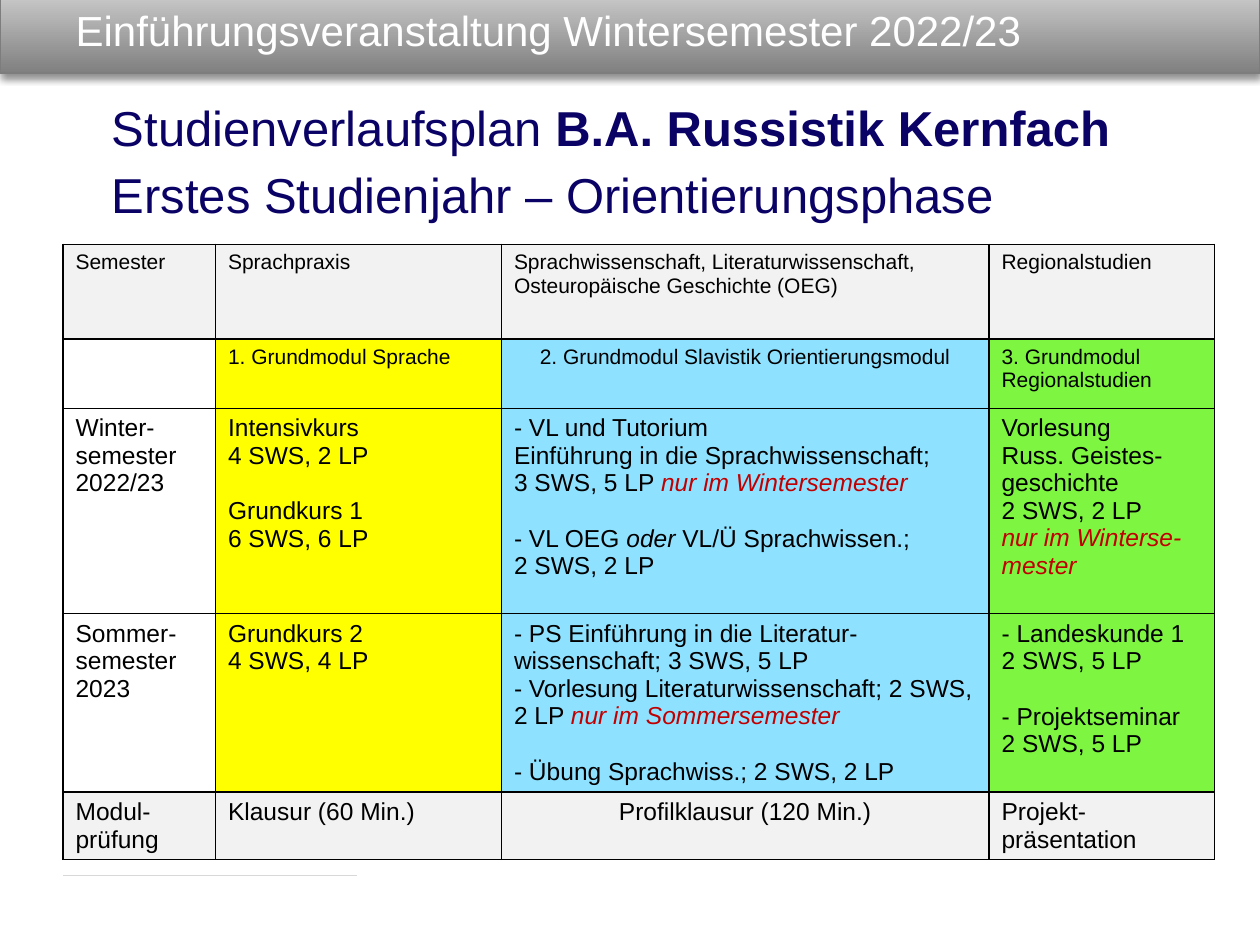
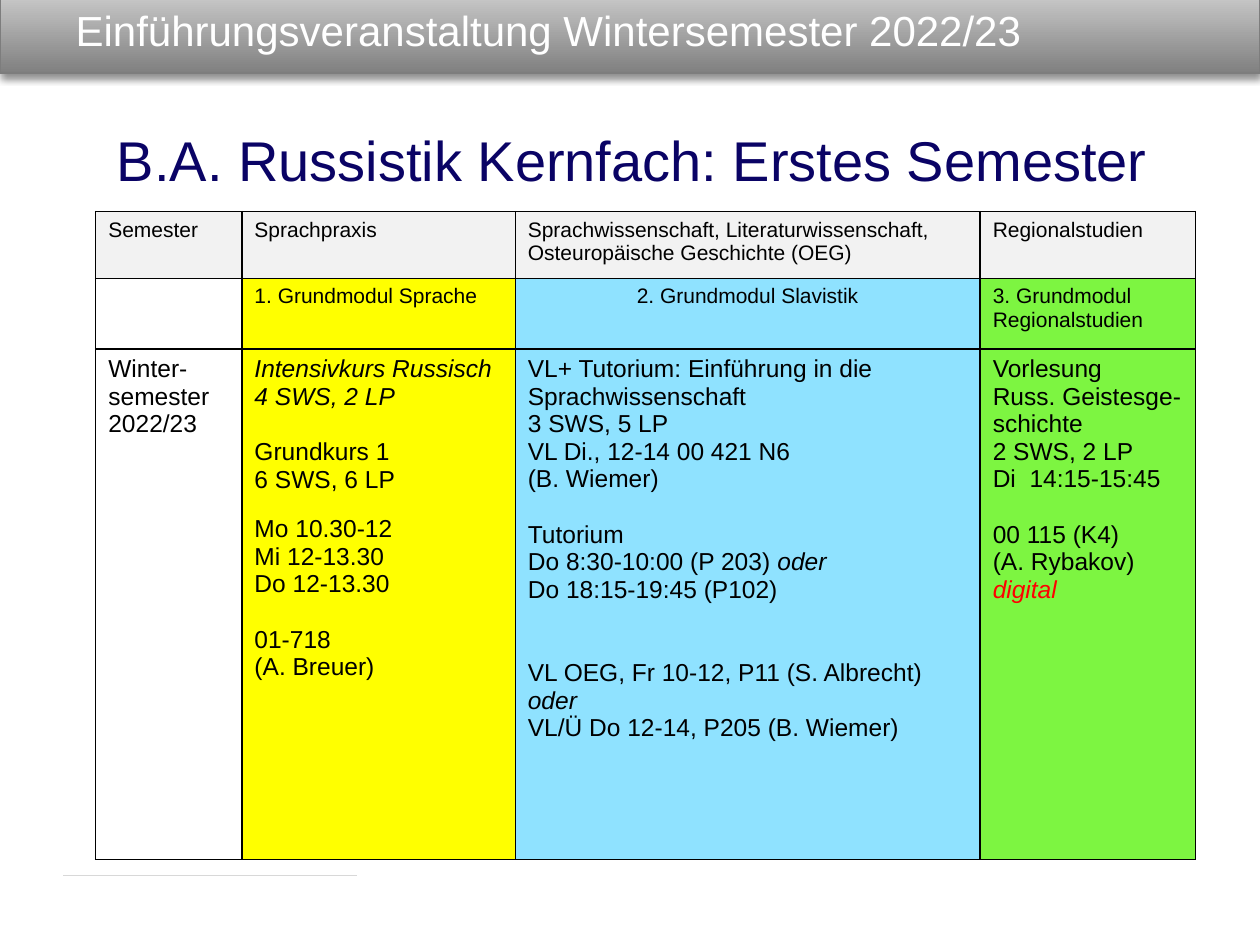
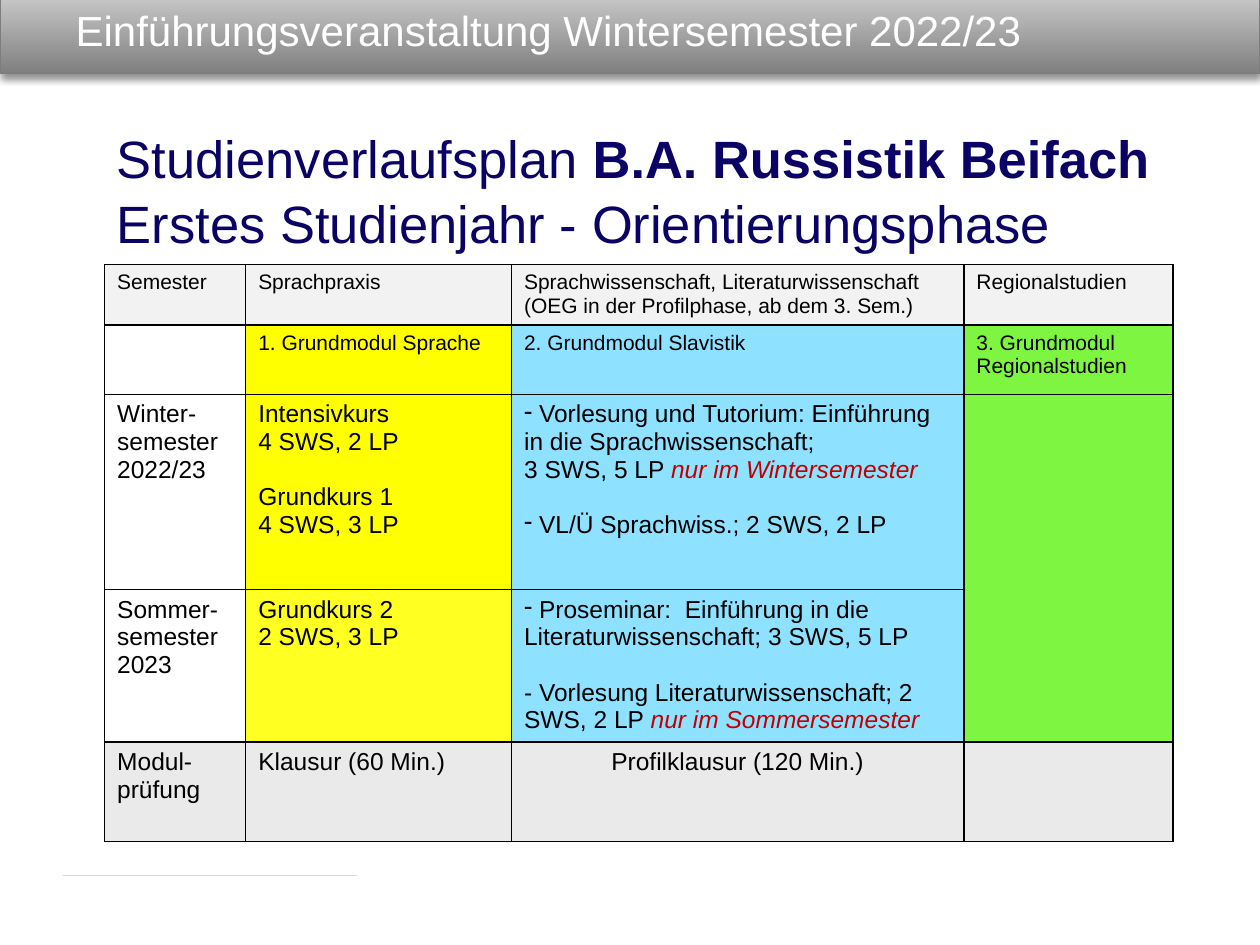
from dataclasses import dataclass

from lxml.etree import SubElement
from pptx import Presentation
from pptx.dml.color import RGBColor
from pptx.enum.shapes import MSO_CONNECTOR, MSO_SHAPE
from pptx.enum.text import MSO_ANCHOR, MSO_AUTO_SIZE, PP_ALIGN
from pptx.oxml.ns import qn
from pptx.util import Inches, Pt

FONT = "Arial"
BLACK = RGBColor(0x00, 0x00, 0x00)
WHITE = RGBColor(0xFF, 0xFF, 0xFF)
NAVY = RGBColor(0x0A, 0x03, 0x65)
CRIMSON = RGBColor(0xC0, 0x00, 0x00)
RED = RGBColor(0xFF, 0x00, 0x00)
YELLOW = RGBColor(0xFF, 0xFF, 0x00)
LEMON = RGBColor(0xFF, 0xFF, 0x21)
BLUE = RGBColor(0x8F, 0xE2, 0xFF)
GREEN = RGBColor(0x7D, 0xF5, 0x41)
PALE = RGBColor(0xF2, 0xF2, 0xF2)
SILVER = RGBColor(0xEA, 0xEA, 0xEA)
RULE = RGBColor(0xD8, 0xD8, 0xD8)
EDGE = RGBColor(0x7D, 0x7D, 0x7D)
DARK = RGBColor(0x80, 0x80, 0x80)
LIGHT = RGBColor(0xCD, 0xCD, 0xCD)

TITLE = "Einführungsveranstaltung Wintersemester 2022/23"
HEADS = ["Semester", "Sprachpraxis",
         "Sprachwissenschaft, Literaturwissenschaft, Osteuropäische Geschichte (OEG)",
         "Regionalstudien"]
LANG = "1. Grundmodul Sprache"
REGION = "3. Grundmodul Regionalstudien"
WINTER = "Winter-semester 2022/23"
SUMMER = "Sommer-semester 2023"
MODULES = [None, YELLOW, BLUE, GREEN]
LINE = 16  # height of one text line in the tables, in points


@dataclass
class Run:
    text: str
    color: RGBColor = None
    bold: bool = None
    italic: bool = None


@dataclass
class Par:
    runs: list
    gap: float = 0
    mid: bool = False
    dash: bool = False
    italic: bool = None


@dataclass
class Row:
    height: float
    size: int
    fills: list
    cells: list


def par(*runs, **style):
    return Par([Run(r) if isinstance(r, str) else r for r in runs], **style)


def slant(text, color=None):
    return Run(text, color, italic=True)


def add_dash(para):
    props = para._p.get_or_add_pPr()
    props.set("marL", "0")
    props.set("indent", "0")
    SubElement(props, qn("a:buChar")).set("char", "-")


def write(frame, pars, size, color):
    """Fill a text frame; each item is a Par or a plain string."""
    if not isinstance(pars, list):
        pars = [pars]
    for i, item in enumerate(pars):
        if isinstance(item, str):
            item = par(item)
        para = frame.paragraphs[0] if i == 0 else frame.add_paragraph()
        para.alignment = PP_ALIGN.CENTER if item.mid else PP_ALIGN.LEFT
        if item.gap:
            para.space_before = Pt(item.gap)
        if item.dash:
            add_dash(para)
        font = para.font
        font.name, font.size, font.italic = FONT, Pt(size), item.italic
        font.color.rgb = color
        for part in item.runs:
            run = para.add_run()
            run.text = part.text
            if part.bold:
                run.font.bold = True
            if part.italic:
                run.font.italic = True
            if part.color is not None:
                run.font.color.rgb = part.color


def add_shadow(shape):
    shape.shadow.inherit = False
    effects = shape._element.spPr.find(qn("a:effectLst"))
    outer = SubElement(effects, qn("a:outerShdw"), blurRad=str(Pt(4)),
                       dist=str(Pt(3)), dir="5400000", rotWithShape="0")
    tint = SubElement(outer, qn("a:srgbClr"), val="000000")
    SubElement(tint, qn("a:alpha"), val="43000")


def add_band(slide):
    band = slide.shapes.add_shape(MSO_SHAPE.RECTANGLE, Inches(0), Inches(-0.08),
                                  Inches(10), Inches(0.66))
    band.fill.gradient()
    band.fill.gradient_angle = 90
    for stop, color in zip(band.fill.gradient_stops, (DARK, LIGHT)):
        stop.color.rgb = color
    band.line.color.rgb = EDGE
    band.line.width = Pt(0.75)
    add_shadow(band)
    slide.shapes.title._element.addprevious(band._element)


def add_rule(slide):
    rule = slide.shapes.add_connector(MSO_CONNECTOR.STRAIGHT, Inches(0.5), Inches(6.95),
                                      Inches(2.83), Inches(6.95))
    rule.line.color.rgb = RULE
    rule.line.width = Pt(0.75)
    SubElement(rule._element.spPr, qn("a:effectLst"))


def add_slide(deck):
    """Add a slide with the shared band, title and footer rule."""
    slide = deck.slides.add_slide(deck.slide_layouts[5])
    title = slide.shapes.title
    title.left, title.top = Inches(0.5), Inches(0)
    title.width, title.height = Inches(9.27), Inches(0.47)
    frame = title.text_frame
    frame.auto_size = MSO_AUTO_SIZE.NONE
    frame.vertical_anchor = MSO_ANCHOR.MIDDLE
    write(frame, TITLE, 24, WHITE)
    add_band(slide)
    add_rule(slide)
    return slide


def add_heading(slide, left, top, height, size, pars):
    box = slide.shapes.add_textbox(Inches(left), Inches(top), Inches(8.43), Inches(height))
    frame = box.text_frame
    frame.word_wrap = True
    frame.margin_top = Inches(0.09)
    write(frame, pars, size, NAVY)


def add_border(cell):
    props = cell._tc.get_or_add_tcPr()
    for side in "LRTB":
        line = SubElement(props, qn(f"a:ln{side}"), w=str(Pt(1)))
        fill = SubElement(line, qn("a:solidFill"))
        SubElement(fill, qn("a:srgbClr"), val=str(BLACK))


def add_plan(slide, left, top, widths, rows):
    """Add the study plan table; cells take the fill and text size of their row."""
    height = sum(row.height for row in rows)
    table = slide.shapes.add_table(len(rows), len(widths), Inches(left), Inches(top),
                                   Inches(sum(widths)), Inches(height)).table
    table.first_row = table.horz_banding = False
    for col, width in zip(table.columns, widths):
        col.width = Inches(width)
    for i, row in enumerate(rows):
        table.rows[i].height = Inches(row.height)
        for j, (fill, text) in enumerate(zip(row.fills, row.cells)):
            cell = table.cell(i, j)
            add_border(cell)
            if fill is None:
                cell.fill.background()
            else:
                cell.fill.solid()
                cell.fill.fore_color.rgb = fill
            if text:
                write(cell.text_frame, text, 12 if row.size == 12 else 14, BLACK)
    return table


def head_row(height, cells=HEADS):
    return Row(height, 12, [PALE] * 4, cells)


def module_row(height, middle):
    return Row(height, 12, MODULES, ["", LANG, middle, REGION])


def term_row(height, cells, fills=MODULES):
    return Row(height, 14, fills, cells)


def exam_row(height, fill, last):
    cells = ["Modul-prüfung", "Klausur (60 Min.)",
             par("Profilklausur (120 Min.)", mid=True), last]
    return Row(height, 14, [fill] * 4, cells)


def major_year(deck):
    slide = add_slide(deck)
    add_plan(slide, 0.5, 1.94, [1.21, 2.27, 3.87, 1.79], [
        head_row(0.75),
        module_row(0.55, par("2. Grundmodul Slavistik Orientierungsmodul", mid=True)),
        term_row(1.63, [
            WINTER,
            ["Intensivkurs", "4 SWS, 2 LP", par("Grundkurs 1", gap=LINE), "6 SWS, 6 LP"],
            ["- VL und Tutorium", "Einführung in die Sprachwissenschaft;",
             par("3 SWS, 5 LP ", slant("nur im Wintersemester", CRIMSON)),
             par("- VL OEG ", slant("oder"), " VL/Ü Sprachwissen.;", gap=LINE),
             "2 SWS, 2 LP"],
            ["Vorlesung", "Russ. Geistes-geschichte", "2 SWS, 2 LP",
             par(slant("nur im Winterse-mester", CRIMSON))],
        ]),
        term_row(1.41, [
            SUMMER,
            ["Grundkurs 2", "4 SWS, 4 LP"],
            ["- PS Einführung in die Literatur-wissenschaft; 3 SWS, 5 LP",
             par("- Vorlesung Literaturwissenschaft; 2 SWS, 2 LP ",
                 slant("nur im Sommersemester", CRIMSON)),
             par("- Übung Sprachwiss.; 2 SWS, 2 LP", gap=LINE)],
            ["- Landeskunde 1", "2 SWS, 5 LP",
             par("- Projektseminar", gap=LINE), "2 SWS, 5 LP"],
        ]),
        exam_row(0.53, PALE, "Projekt-präsentation"),
    ])
    add_heading(slide, 0.79, 0.68, 1.11, 28, [
        par("Studienverlaufsplan ", Run("B.A. Russistik Kernfach", bold=True)),
        par("Erstes Studienjahr – Orientierungsphase", gap=5)])


def major_term(deck):
    slide = add_slide(deck)
    add_plan(slide, 0.76, 1.68, [1.16, 2.17, 3.69, 1.71], [
        head_row(0.53),
        module_row(0.56, par("2. Grundmodul Slavistik", mid=True)),
        term_row(4.05, [
            WINTER,
            [par("Intensivkurs Russisch", italic=True), par("4 SWS, 2 LP", italic=True),
             par("Grundkurs 1", gap=LINE), "6 SWS, 6 LP",
             par("Mo 10.30-12", gap=12.5), "Mi 12-13.30", "Do 12-13.30",
             par("01-718", gap=LINE), "(A. Breuer)"],
            ["VL+ Tutorium: Einführung in die Sprachwissenschaft", "3 SWS, 5 LP",
             "VL Di., 12-14 00 421 N6", "(B. Wiemer)",
             par("Tutorium", gap=LINE),
             par("Do 8:30-10:00 (P 203) ", slant("oder")), "Do 18:15-19:45 (P102)",
             par("VL OEG, Fr 10-12, P11 (S. Albrecht) ", slant("oder"), gap=2 * LINE),
             "VL/Ü Do 12-14, P205 (B. Wiemer)"],
            ["Vorlesung", "Russ. Geistesge-schichte", "2 SWS, 2 LP", "Di  14:15-15:45",
             par("00 115 (K4)", gap=LINE), "(A. Rybakov)", par(slant("digital", RED))],
        ]),
    ])
    add_heading(slide, 0.83, 0.91, 0.64, 32, "B.A. Russistik Kernfach: Erstes Semester")


def minor_year(deck):
    slide = add_slide(deck)
    heads = HEADS[:2] + [["Sprachwissenschaft, Literaturwissenschaft",
                          "(OEG in der Profilphase, ab dem 3. Sem.)"]] + HEADS[3:]
    table = add_plan(slide, 0.83, 2.1, [1.12, 2.11, 3.59, 1.66], [
        head_row(0.48, heads),
        module_row(0.55, "2. Grundmodul Slavistik"),
        term_row(1.55, [
            WINTER,
            ["Intensivkurs", "4 SWS, 2 LP", par("Grundkurs 1", gap=LINE), "4 SWS, 3 LP"],
            [par(" Vorlesung und Tutorium: Einführung in die Sprachwissenschaft;", dash=True),
             par("3 SWS, 5 LP ", slant("nur im Wintersemester", CRIMSON)),
             par(" VL/Ü Sprachwiss.; 2 SWS, 2 LP", gap=LINE, dash=True)],
            "",
        ]),
        term_row(1.21, [
            SUMMER,
            ["Grundkurs 2", "2 SWS, 3 LP"],
            [par(" Proseminar:  Einführung in die Literaturwissenschaft; 3 SWS, 5 LP",
                 dash=True),
             par("- Vorlesung Literaturwissenschaft; 2 SWS, 2 LP ",
                 slant("nur im Sommersemester", CRIMSON), gap=LINE)],
            "",
        ], [None, LEMON, BLUE, GREEN]),
        exam_row(0.79, SILVER, ""),
    ])
    table.cell(2, 3).merge(table.cell(3, 3))
    add_heading(slide, 0.83, 0.91, 1.1, 30, [
        par("Studienverlaufsplan ", Run("B.A. Russistik Beifach", bold=True)),
        par("Erstes Studienjahr - Orientierungsphase", gap=1)])


def main():
    deck = Presentation()
    deck.slide_width, deck.slide_height = Inches(10), Inches(7.5)
    major_year(deck)
    major_term(deck)
    minor_year(deck)
    deck.save("out.pptx")


if __name__ == "__main__":
    main()
